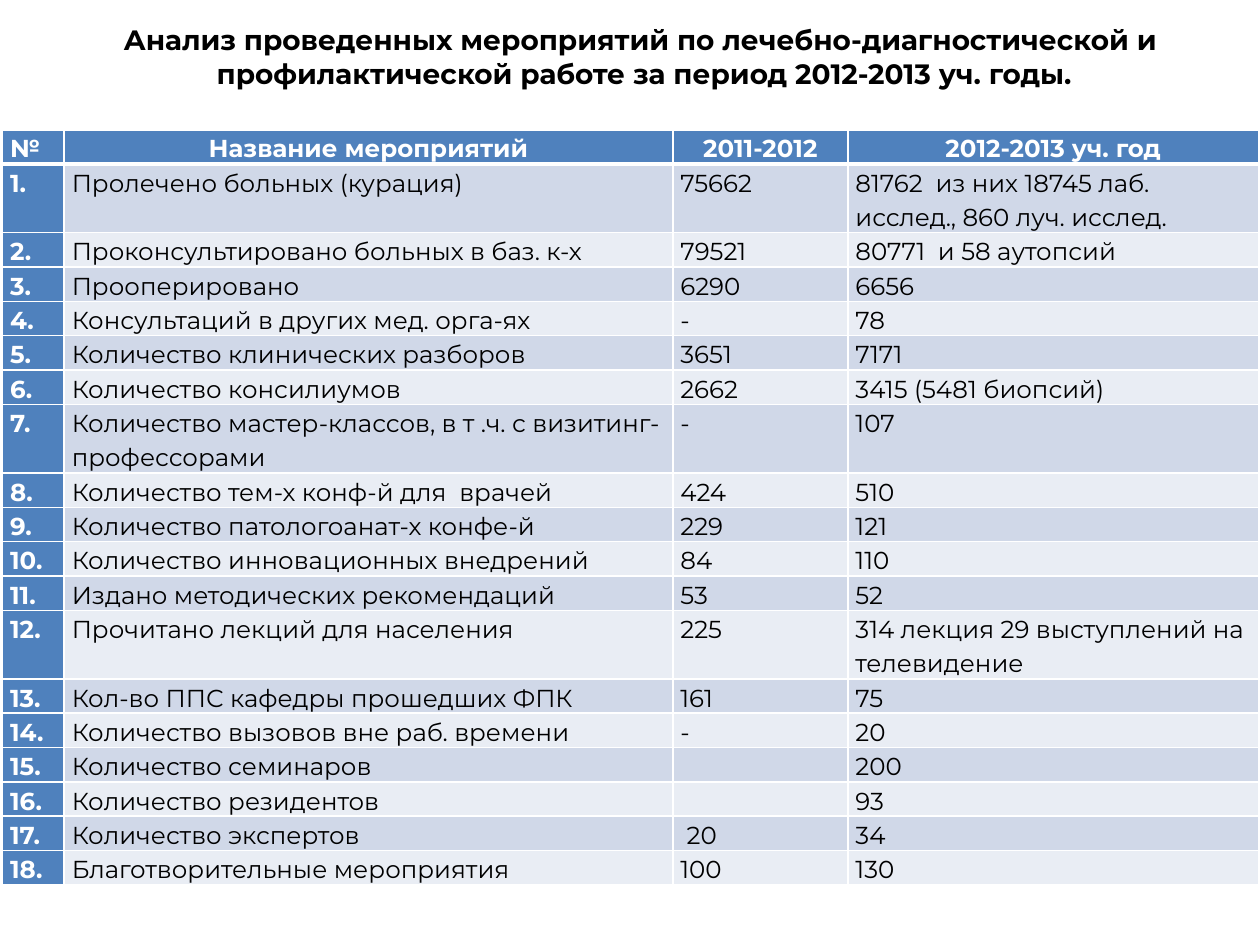
from dataclasses import dataclass

import lxml.etree
import pptx
import pptx.dml.color
import pptx.enum.text
import pptx.oxml.ns
import pptx.util


@dataclass(frozen=True)
class Theme:
    font: str = "Montserrat"
    title_size: int = 16
    table_size: int = 14
    accent: str = "4F81BD"
    bands: tuple = ("E9EDF4", "D0D8E8")
    dark: str = "000000"
    light: str = "FFFFFF"


theme = Theme()
RGB = pptx.dml.color.RGBColor.from_string
Inches, Pt = pptx.util.Inches, pptx.util.Pt
qn = pptx.oxml.ns.qn
ALIGN = pptx.enum.text.PP_ALIGN


def add_run(paragraph, text, size, color, bold):
    run = paragraph.add_run()
    run.text = text
    run.font.name = theme.font
    run.font.size = Pt(size)
    run.font.bold = bold
    run.font.color.rgb = RGB(color)


def add_borders(cell, widths):
    """Draw the cell's borders; widths maps a side (L, R, T, B) to points."""
    properties = cell._tc.get_or_add_tcPr()
    for position, (side, width) in enumerate(widths.items()):
        line = lxml.etree.Element(qn(f"a:ln{side}"), w=str(Pt(width)))
        fill = lxml.etree.SubElement(line, qn("a:solidFill"))
        lxml.etree.SubElement(fill, qn("a:srgbClr"), val=theme.light)
        properties.insert(position, line)


title_lines = [
    "Анализ проведенных мероприятий по лечебно-диагностической и ",
    "профилактической работе за период 2012-2013 уч. годы.",
]
header = ("№", "Название мероприятий", "2011-2012", "2012-2013 уч. год")
activities = [
    ("Пролечено больных (курация)", "75662",
     "81762  из них 18745 лаб. исслед., 860 луч. исслед."),
    ("Проконсультировано больных в баз. к-х", "79521", "80771  и 58 аутопсий"),
    ("Прооперировано", "6290", "6656"),
    ("Консультаций в других мед. орга-ях", "-", "78"),
    ("Количество клинических разборов", "3651", "7171"),
    ("Количество консилиумов", "2662", "3415 (5481 биопсий)"),
    ("Количество мастер-классов, в т .ч. с визитинг-профессорами", "-", "107"),
    ("Количество тем-х конф-й для  врачей", "424", "510"),
    ("Количество патологоанат-х конфе-й", "229", "121"),
    ("Количество инновационных внедрений", "84", "110"),
    ("Издано методических рекомендаций", "53", "52"),
    ("Прочитано лекций для населения", "225",
     "314 лекция 29 выступлений на телевидение"),
    ("Кол-во ППС кафедры прошедших ФПК", "161", "75"),
    ("Количество вызовов вне раб. времени", "-", "20"),
    ("Количество семинаров", "", "200"),
    ("Количество резидентов", "", "93"),
    ("Количество экспертов", " 20", "34"),
    ("Благотворительные мероприятия", "100", "130"),
]
rows = [header] + [
    (f"{number}.", *activity) for number, activity in enumerate(activities, 1)
]
two_line_rows = {1, 7, 12}
column_widths = [0.49, 4.83, 1.39, 3.26]
line_height = 0.27

presentation = pptx.Presentation()
presentation.slide_width, presentation.slide_height = Inches(10), Inches(7.5)
slide = presentation.slides.add_slide(presentation.slide_layouts[5])

# Title
title = slide.shapes.title
title.left, title.top = Inches(0.56), Inches(0.13)
title.width, title.height = Inches(9.11), Inches(1.04)
title_frame = title.text_frame
title_frame.word_wrap = True
title_frame.auto_size = pptx.enum.text.MSO_AUTO_SIZE.NONE
title_frame.vertical_anchor = pptx.enum.text.MSO_ANCHOR.TOP
for index, text in enumerate(title_lines):
    paragraph = title_frame.add_paragraph() if index else title_frame.paragraphs[0]
    paragraph.alignment = ALIGN.CENTER
    add_run(paragraph, text, theme.title_size, theme.dark, True)

# Table of activities
table = slide.shapes.add_table(
    len(rows), len(column_widths), Inches(0.02), Inches(1.03),
    Inches(sum(column_widths)),
    Inches(line_height * (len(rows) + len(two_line_rows))),
).table
table.first_col = True
for column, width in zip(table.columns, column_widths):
    column.width = Inches(width)

for row_index, values in enumerate(rows):
    lines = 2 if row_index in two_line_rows else 1
    table.rows[row_index].height = Inches(line_height * lines)
    for column_index, text in enumerate(values):
        is_heading = row_index == 0 or column_index == 0
        cell = table.cell(row_index, column_index)
        cell.margin_left = cell.margin_right = Inches(0.06)
        cell.margin_top = cell.margin_bottom = 0
        cell.fill.solid()
        cell.fill.fore_color.rgb = RGB(
            theme.accent if is_heading else theme.bands[row_index % 2])
        add_borders(cell, {"L": 1, "R": 1, "T": 3 if row_index == 1 else 1,
                           "B": 3 if row_index == 0 else 1})
        paragraph = cell.text_frame.paragraphs[0]
        paragraph.line_spacing = 1.15
        if row_index == 0 and column_index > 0:
            paragraph.alignment = ALIGN.CENTER
        if text:
            add_run(paragraph, text, theme.table_size,
                    theme.light if is_heading else theme.dark, is_heading)
        else:
            # An empty cell keeps the table's type size, so its row stays low
            lxml.etree.SubElement(paragraph._p, qn("a:endParaRPr"),
                                  sz=str(theme.table_size * 100))

presentation.save("out.pptx")
